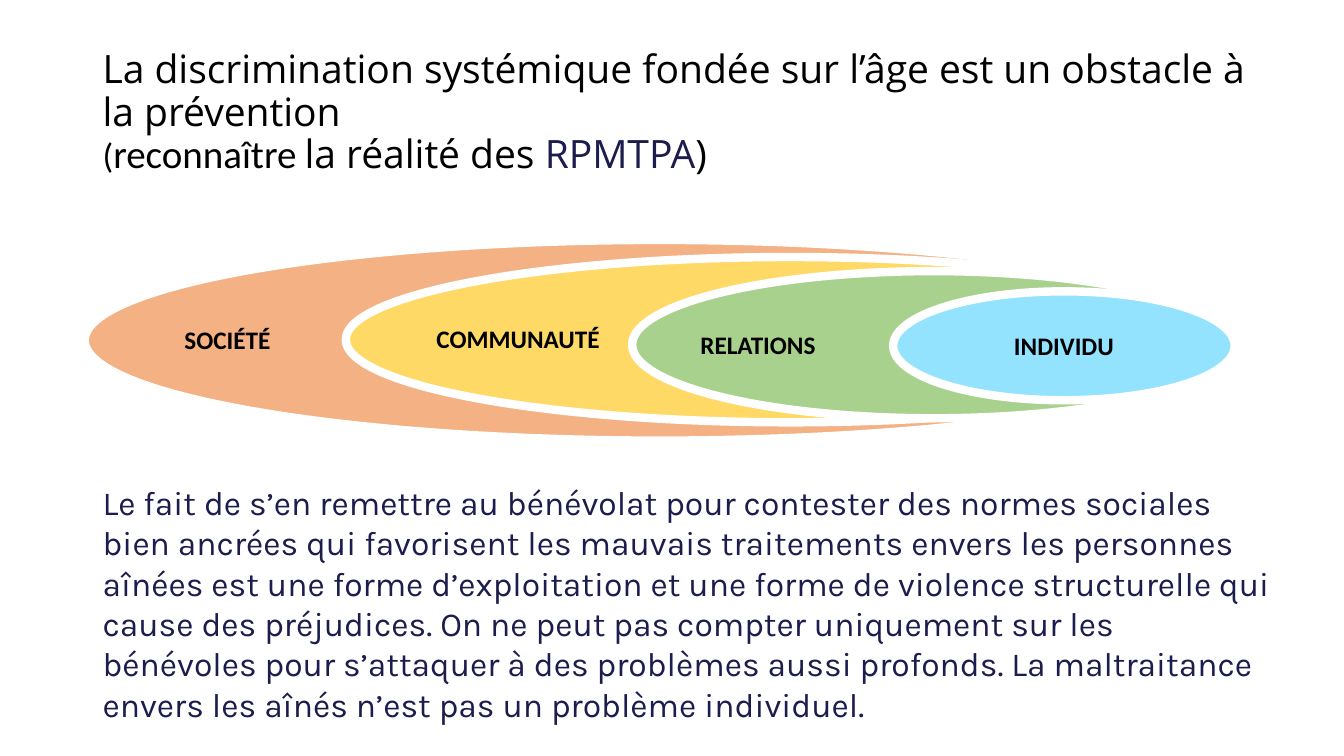
from pptx import Presentation
from pptx.dml.color import RGBColor
from pptx.enum import shapes, text
from pptx.util import Pt

BLACK = RGBColor(0x00, 0x00, 0x00)
WHITE = RGBColor(0xFF, 0xFF, 0xFF)
NAVY = RGBColor(0x1B, 0x1D, 0x4C)
ORANGE = RGBColor(0xF4, 0xB1, 0x83)
YELLOW = RGBColor(0xFF, 0xD9, 0x66)
GREEN = RGBColor(0xA9, 0xD1, 0x8E)
BLUE = RGBColor(0x93, 0xE3, 0xFF)

# Left, top and height inside the diagram, then fill
LEVELS = [
    (0, 0, 143.3, ORANGE),
    (186.5, 12.2, 118.1, YELLOW),
    (391, 22.3, 105.1, GREEN),
    (577.5, 36.7, 77.8, BLUE),
]
# Left and top inside the diagram
LABELS = [
    ("SOCIÉTÉ", 64.1, 56.9),
    ("COMMUNAUTÉ", 244.1, 56.2),
    ("RELATIONS", 432.7, 60.5),
]
BODY = [
    "Le fait de s’en remettre au bénévolat pour contester des normes sociales",
    "bien ancrées qui favorisent les mauvais traitements envers les personnes "
    "aînées est une forme d’exploitation et une forme de violence structurelle "
    "qui cause des préjudices. On ne peut pas compter uniquement sur les "
    "bénévoles pour s’attaquer à des problèmes aussi profonds. La maltraitance "
    "envers les aînés n’est pas un problème individuel.",
]


def add_run(paragraph, words, size, font, color, bold=False):
    run = paragraph.add_run()
    run.text = words
    run.font.size = Pt(size)
    run.font.name = font
    run.font.bold = bold
    run.font.color.rgb = color


def add_frame(slide, left, top, width, height):
    """Add a wrapping text box and return its text frame."""
    frame = slide.shapes.add_textbox(
        Pt(left), Pt(top), Pt(width), Pt(height)).text_frame
    frame.word_wrap = True
    return frame


def add_title(slide, left, top, width, height):
    frame = add_frame(slide, left, top, width, height)
    frame.vertical_anchor = text.MSO_ANCHOR.MIDDLE
    title = frame.paragraphs[0]
    title.line_spacing = 0.9
    add_run(title, "La discrimination systémique fondée sur l’âge est un "
                   "obstacle à la prévention", 27.9, "Open Sans", BLACK)
    title.add_line_break()
    for words, size, font, color in [
        ("(", 25.2, "Calibri", BLACK),
        ("reconnaître", 27.9, "Calibri", BLACK),
        (" ", 25.2, "Calibri", BLACK),
        ("la réalité des ", 27.9, "Open Sans", BLACK),
        ("RPMTPA", 27.9, "Open Sans", NAVY),
        (")", 27.9, "Open Sans", BLACK),
    ]:
        add_run(title, words, size, font, color)


def add_level_label(paragraph, words):
    add_run(paragraph, words, 18, "Calibri", BLACK, bold=True)


def add_nested_levels(slide, left, top, width):
    """Draw the ellipses, which all end at the right edge of the diagram."""
    for indent, drop, height, color in LEVELS:
        level = slide.shapes.add_shape(
            shapes.MSO_SHAPE.OVAL, Pt(left + indent), Pt(top + drop),
            Pt(width - indent), Pt(height))
        level.shadow.inherit = False
        level.fill.solid()
        level.fill.fore_color.rgb = color
        level.line.color.rgb = WHITE
        level.line.width = Pt(6)

    innermost = level.text_frame
    innermost.vertical_anchor = text.MSO_ANCHOR.MIDDLE
    innermost.paragraphs[0].alignment = text.PP_ALIGN.CENTER
    add_level_label(innermost.paragraphs[0], "INDIVIDU")

    for words, indent, drop in LABELS:
        label = add_frame(slide, left + indent, top + drop, 142.6, 28.8)
        add_level_label(label.paragraphs[0], words)


def add_body(slide, left, top, width, height):
    frame = add_frame(slide, left, top, width, height)
    for index, words in enumerate(BODY):
        paragraph = frame.add_paragraph() if index else frame.paragraphs[0]
        add_run(paragraph, words, 24, "Karla", NAVY)


def main():
    deck = Presentation()
    deck.slide_width, deck.slide_height = Pt(960), Pt(540)
    slide = deck.slides.add_slide(deck.slide_layouts[6])
    add_title(slide, 66.2, 28.8, 1044 - 209, 104.4)
    add_nested_levels(slide, 60.5, 171.4, 821.5)
    add_body(slide, 66.2, 340.6, 848.2, 181.4)
    deck.save("out.pptx")


if __name__ == "__main__":
    main()
